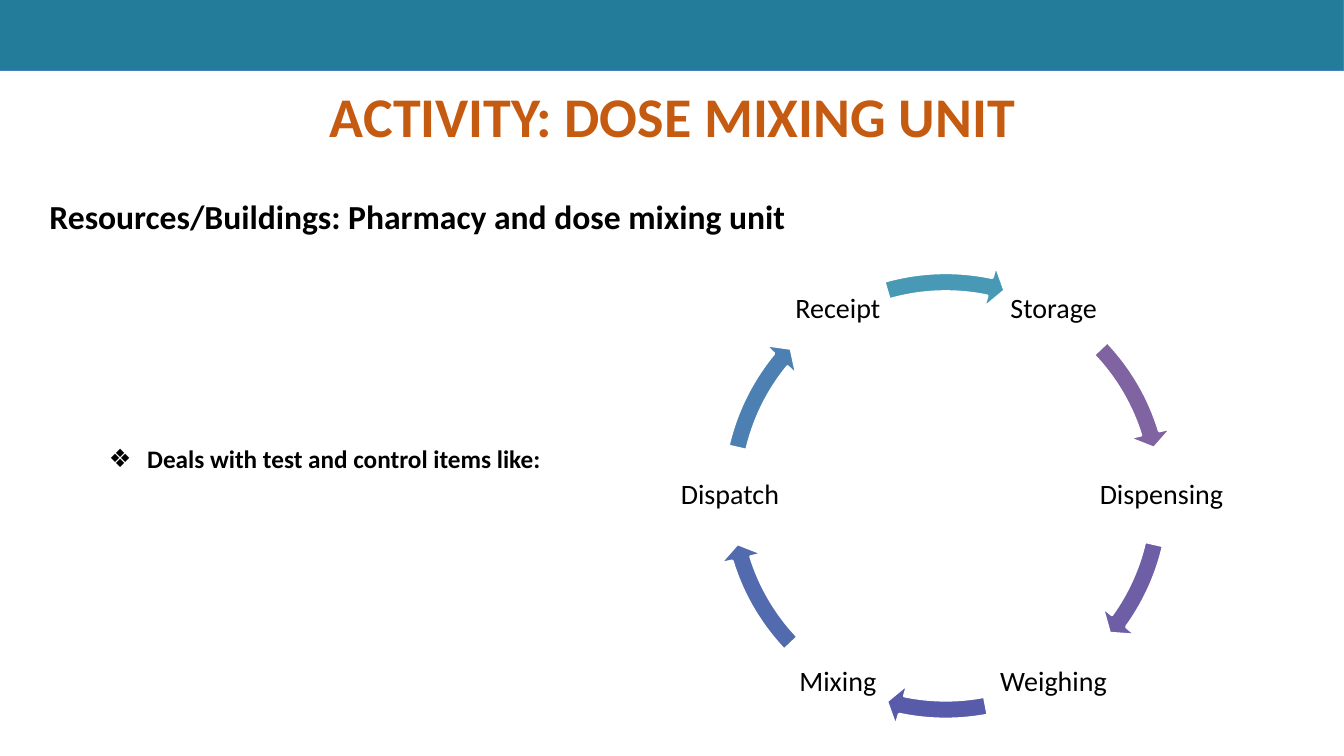
import math
from lxml import etree
from pptx import Presentation
from pptx.dml.color import RGBColor
from pptx.enum.shapes import MSO_SHAPE
from pptx.enum.text import MSO_ANCHOR, MSO_AUTO_SIZE, PP_ALIGN
from pptx.oxml.ns import qn
from pptx.util import Inches, Pt

ARROW, RECT = MSO_SHAPE.CIRCULAR_ARROW, MSO_SHAPE.RECTANGLE
TOP, MIDDLE = MSO_ANCHOR.TOP, MSO_ANCHOR.MIDDLE
LEFT, CENTER = PP_ALIGN.LEFT, PP_ALIGN.CENTER
FIXED = MSO_AUTO_SIZE.NONE

TITLE = "ACTIVITY: DOSE MIXING UNIT"
HEADING = "Resources/Buildings: Pharmacy and dose mixing unit"
POINT = "Deals with test and control items like:"

# label, label width, then end angle, start angle and colour of the arrow after it
STEPS = [
    ("Storage", 0.96, 342.9, 316.37, "8064A2"),
    ("Dispensing", 1.47, 35.79, 12.93, "6D5EA6"),
    ("Weighing", 1.33, 101.87, 79.1, "585AAA"),
    ("Mixing", 0.96, 162.9, 136.37, "526BAE"),
    ("Dispatch", 1.43, 219.46, 192.93, "4C80B2"),
    ("Receipt", 0.96, 281.87, 253.97, "4799B5"),
]
MID_X, MID_Y = 9.38, 4.92
RADIUS = 2.14
RING = 4.68
LABEL_H = 0.96
HEAD_ANGLE = 4.17


def color(code):
    return RGBColor.from_string(code)


def angle(deg):
    """Turn degrees into the scale of shape adjustments."""
    return deg * 0.6


def place(shape, x, y, w, h):
    shape.left, shape.top = Inches(x), Inches(y)
    shape.width, shape.height = Inches(w), Inches(h)


def write(shape, text, size, code="000000", bold=False, align=LEFT,
          anchor=TOP, pads=(0.1, 0.05, 0.1, 0.05), bullet=None):
    frame = shape.text_frame
    frame.text = text
    frame.word_wrap = True
    frame.auto_size = FIXED
    frame.vertical_anchor = anchor
    (frame.margin_left, frame.margin_top,
     frame.margin_right, frame.margin_bottom) = map(Inches, pads)
    para = frame.paragraphs[0]
    props = para._p.get_or_add_pPr()
    indent = Inches(0.38) if bullet else 0
    props.set("marL", str(indent))
    props.set("indent", str(-indent))
    if bullet:
        etree.SubElement(props, qn("a:buChar")).set("char", bullet)
    else:
        etree.SubElement(props, qn("a:buNone"))
    para.alignment = align
    para.space_before = Pt(0)
    font = para.runs[0].font
    font.name, font.size, font.bold = "Calibri", Pt(size), bold
    font.color.rgb = color(code)
    return para


def draw(slide, kind, box, fill, line, width):
    shape = slide.shapes.add_shape(kind, *map(Inches, box))
    shape.shadow.inherit = False
    shape.fill.solid()
    shape.fill.fore_color.rgb = color(fill)
    shape.line.color.rgb = color(line)
    shape.line.width = Pt(width)
    return shape


def add_cycle(slide):
    for i, (name, wide, end, start, fill) in enumerate(STEPS):
        turn = math.radians(60 * (i - 1))
        x = MID_X + RADIUS * math.cos(turn) - wide / 2
        y = MID_Y + RADIUS * math.sin(turn) - LABEL_H / 2
        label = slide.shapes.add_textbox(*map(Inches, (x, y, wide, LABEL_H)))
        para = write(label, name, 20, align=CENTER, anchor=MIDDLE, pads=[0.03] * 4)
        para.line_spacing = 0.9

        box = (MID_X - RING / 2, MID_Y - RING / 2, RING, RING)
        arrow = draw(slide, ARROW, box, fill, "FFFFFF", 2)
        values = 0.04, angle(HEAD_ANGLE), angle(end), angle(start), 0.047
        for n, value in enumerate(values):
            arrow.adjustments[n] = value


def main():
    deck = Presentation()
    deck.slide_width, deck.slide_height = Inches(13.33), Inches(7.5)
    slide = deck.slides.add_slide(deck.slide_layouts[3])
    draw(slide, RECT, (0, 0, 13.33, 0.7), "237C9A", "4B7EBC", 0.75)

    title, heading, point = slide.placeholders
    flat = (0.1, 0.05, 0.1, 0)
    place(title, 0.67, 0.76, 12, 0.65)
    write(title, TITLE, 40, "C55A11", True, CENTER, pads=flat)
    place(heading, 0.39, 1.89, 8.35, 0.82)
    write(heading, HEADING, 24, bold=True, pads=flat)
    place(point, 0.98, 4.35, 6.51, 0.51)
    write(point, POINT, 18, bold=True, bullet="❖")

    add_cycle(slide)
    deck.save("out.pptx")


if __name__ == "__main__":
    main()
